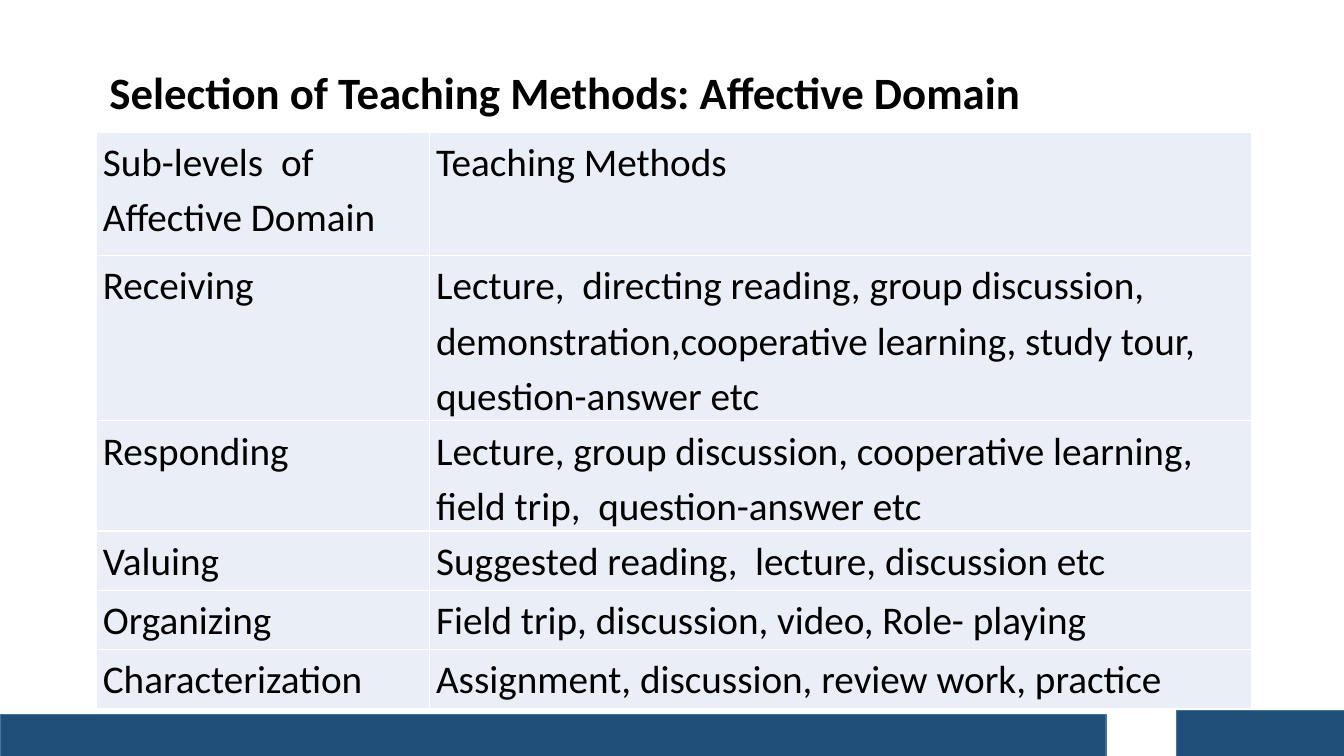
import pptx
import pptx.dml.color
import pptx.enum.shapes
import pptx.enum.text
import pptx.oxml
import pptx.oxml.ns
import pptx.util
from dataclasses import dataclass

Pt = pptx.util.Pt

TITLE = "Selection of Teaching Methods: Affective Domain"
ROWS = [
    (["Sub-levels  of", "Affective Domain"], ["Teaching Methods"]),
    (["Receiving"], ["Lecture,  directing reading, group discussion, "
                     "demonstration,cooperative learning, study tour, question-answer etc"]),
    (["Responding"], ["Lecture, group discussion, cooperative learning, "
                      "field trip,  question-answer etc"]),
    (["Valuing"], ["Suggested reading,  lecture, discussion etc"]),
    (["Organizing"], ["Field trip, discussion, video, Role- playing"]),
    (["Characterization"], ["Assignment, discussion, review work, practice"]),
]

# Left, top, width, height in points
TITLE_BOX = (71, 36.5, 816.5, 49)
TABLE_ORIGIN = (68.5, 94.5)
COLUMN_WIDTHS = (238, 587.5)
ROW_HEIGHTS = (88, 116.5, 77.5, 42.25, 42.25, 42.25)
FOOTER_BARS = [(0, 510.5, 790, 33), (840.5, 507.5, 121, 33)]


@dataclass(frozen=True)
class Theme:
    font: str = "Calibri"
    title_size: float = 32
    table_size: float = 28
    line_spacing: float = 1.15
    line_width: float = 1
    text: str = "000000"
    cell: str = "EAEFF7"
    border: str = "FFFFFF"
    bar: str = "1F4E79"
    bar_line: str = "43739E"


THEME = Theme()


def rgb(value):
    return pptx.dml.color.RGBColor.from_string(value)


def write_paragraphs(text_frame, lines, size, bold=False):
    for index, line in enumerate(lines):
        paragraph = text_frame.add_paragraph() if index else text_frame.paragraphs[0]
        paragraph.alignment = pptx.enum.text.PP_ALIGN.LEFT
        paragraph.line_spacing = THEME.line_spacing
        paragraph.space_before = Pt(0)
        run = paragraph.add_run()
        run.text = line
        run.font.name = THEME.font
        run.font.size = Pt(size)
        run.font.bold = bold
        run.font.color.rgb = rgb(THEME.text)


def add_borders(cell):
    """Draw all four cell sides; must run before the fill is set."""
    properties = cell._tc.get_or_add_tcPr()
    for side in ("lnL", "lnR", "lnT", "lnB"):
        properties.append(pptx.oxml.parse_xml(
            f'<a:{side} {pptx.oxml.ns.nsdecls("a")} w="{Pt(THEME.line_width)}">'
            f'<a:solidFill><a:srgbClr val="{THEME.border}"/></a:solidFill></a:{side}>'))


def add_title(slide):
    title = slide.shapes.title
    title.left, title.top, title.width, title.height = map(Pt, TITLE_BOX)
    frame = title.text_frame
    frame.word_wrap = True
    frame.auto_size = pptx.enum.text.MSO_AUTO_SIZE.NONE
    frame.vertical_anchor = pptx.enum.text.MSO_ANCHOR.TOP
    write_paragraphs(frame, [TITLE], THEME.title_size, bold=True)
    frame.paragraphs[0].space_after = Pt(6)


def add_methods_table(slide):
    box = (*TABLE_ORIGIN, sum(COLUMN_WIDTHS), sum(ROW_HEIGHTS))
    table = slide.shapes.add_table(len(ROWS), len(COLUMN_WIDTHS), *map(Pt, box)).table
    table.first_row = table.horz_banding = False
    for column, width in zip(table.columns, COLUMN_WIDTHS):
        column.width = Pt(width)
    for row, height, texts in zip(table.rows, ROW_HEIGHTS, ROWS):
        row.height = Pt(height)
        for cell, lines in zip(row.cells, texts):
            cell.margin_left = cell.margin_right = Pt(5)
            cell.margin_top = cell.margin_bottom = Pt(0)
            add_borders(cell)
            cell.fill.solid()
            cell.fill.fore_color.rgb = rgb(THEME.cell)
            write_paragraphs(cell.text_frame, lines, THEME.table_size)


def add_footer_bars(slide):
    for box in FOOTER_BARS:
        bar = slide.shapes.add_shape(pptx.enum.shapes.MSO_SHAPE.RECTANGLE, *map(Pt, box))
        bar.shadow.inherit = False
        bar.fill.solid()
        bar.fill.fore_color.rgb = rgb(THEME.bar)
        bar.line.color.rgb = rgb(THEME.bar_line)
        bar.line.width = Pt(THEME.line_width)


def main():
    presentation = pptx.Presentation()
    presentation.slide_width, presentation.slide_height = Pt(960), Pt(540)
    slide = presentation.slides.add_slide(presentation.slide_layouts.get_by_name("Title Only"))
    add_title(slide)
    add_methods_table(slide)
    add_footer_bars(slide)
    presentation.save("out.pptx")


if __name__ == "__main__":
    main()
